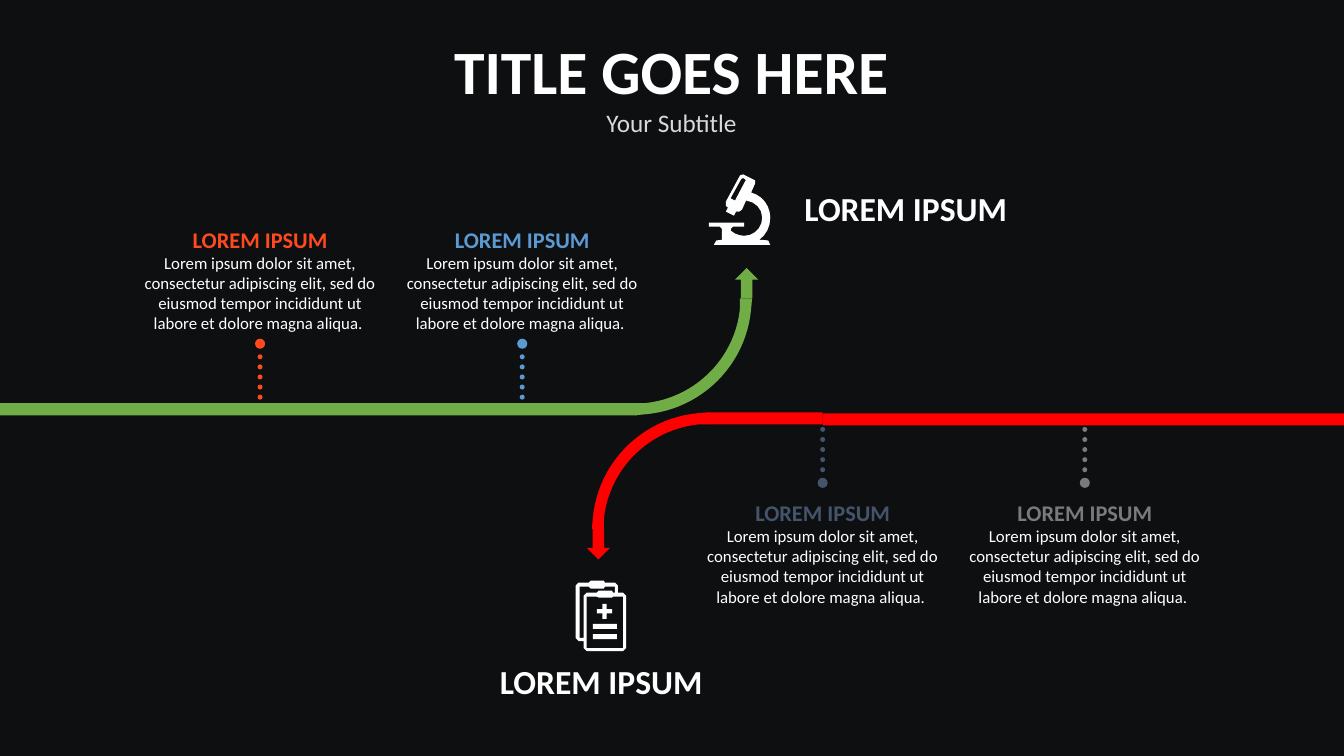
from math import ceil, cos, dist, pi, sin

from pptx import Presentation
from pptx.dml.color import RGBColor
from pptx.enum.shapes import MSO_SHAPE as Preset
from pptx.enum.text import MSO_AUTO_SIZE as AutoSize, PP_ALIGN as Align
from pptx.util import Inches, Pt

BACKGROUND = RGBColor(0x0E, 0x0F, 0x11)
WHITE = RGBColor(0xFF, 0xFF, 0xFF)
LIGHT_GRAY = RGBColor(0xD9, 0xD9, 0xD9)
GREEN = RGBColor(0x70, 0xAD, 0x47)
RED = RGBColor(0xFF, 0x00, 0x00)
ORANGE = RGBColor(0xFE, 0x4A, 0x1E)
BLUE = RGBColor(0x5C, 0x9A, 0xD3)
SLATE = RGBColor(0x44, 0x54, 0x6B)
GRAY = RGBColor(0x7A, 0x7A, 0x7A)

WIDTH, HEIGHT = 13.33, 7.5
BAND = 0.12
HEADING = "LOREM IPSUM"
BODY = ("Lorem ipsum dolor sit amet, consectetur adipiscing elit, sed do "
        "eiusmod tempor incididunt ut labore et dolore magna aliqua. ")

# In outlines, a pair is a corner and six numbers are a Bézier curve.
UP_BEND = [
    (7.46, 2.96), (7.45, 3.07), (7.4, 3.62, 6.96, 4.06, 6.41, 4.11),
    (6.3, 4.12), (6.3, 4), (6.4, 4), (6.89, 3.95, 7.29, 3.56, 7.34, 3.06),
    (7.34, 2.96),
]
MICROSCOPE = [
    [(7.56, 2.38), (7.53, 2.38), (7.6, 2.33, 7.64, 2.25, 7.64, 2.16),
     (7.64, 2.04, 7.56, 1.94, 7.45, 1.91), (7.49, 1.82), (7.49, 1.79),
     (7.37, 1.73), (7.34, 1.74), (7.2, 2),
     (7.19, 2.03, 7.2, 2.06, 7.22, 2.06), (7.2, 2.1), (7.28, 2.14),
     (7.3, 2.1), (7.32, 2.11, 7.34, 2.1, 7.36, 2.08), (7.4, 1.99),
     (7.49, 2, 7.56, 2.07, 7.56, 2.16), (7.56, 2.26, 7.48, 2.34, 7.38, 2.34),
     (7.34, 2.34, 7.28, 2.32, 7.25, 2.29), (7.25, 2.27), (7.27, 2.25),
     (7.38, 2.25), (7.38, 2.21), (7.03, 2.21), (7.03, 2.25), (7.14, 2.25),
     (7.16, 2.27), (7.16, 2.38), (7.12, 2.38, 7.08, 2.38, 7.08, 2.43),
     (7.64, 2.43), (7.64, 2.38, 7.61, 2.38, 7.56, 2.38)],
    [(7.4, 1.79), (7.39, 1.8), (7.29, 1.99), (7.25, 1.97), (7.25, 1.96),
     (7.35, 1.78), (7.36, 1.77), (7.38, 1.77)],
]
CLIPBOARDS = [
    [(6.18, 5.88), (6.13, 5.88), (6.13, 5.81), (6.1, 5.78), (6, 5.78),
     (5.99, 5.76), (5.86, 5.76), (5.84, 5.78), (5.74, 5.78), (5.71, 5.81),
     (5.71, 6.33), (5.74, 6.36), (5.79, 6.36), (5.79, 6.43), (5.82, 6.46),
     (6.18, 6.46), (6.21, 6.43), (6.21, 5.91)],
    [(5.79, 5.91), (5.79, 6.33), (5.75, 6.33), (5.75, 5.82), (5.84, 5.82),
     (5.86, 5.84), (5.99, 5.84), (6, 5.82), (6.1, 5.82), (6.1, 5.88),
     (6.08, 5.88), (6.07, 5.86), (5.94, 5.86), (5.92, 5.88), (5.82, 5.88)],
    [(6.18, 6.43), (5.82, 6.43), (5.82, 5.92), (5.92, 5.92), (5.94, 5.93),
     (6.07, 5.93), (6.08, 5.92), (6.18, 5.92)],
]


def flatten(outline):
    """Turn corners and curves into points, with more on longer curves."""
    points = []
    for part in outline:
        if len(part) == 2:
            points.append(part)
            continue
        x0, y0 = points[-1]
        x1, y1, x2, y2, x3, y3 = part
        steps = max(2, ceil(16 * dist((x0, y0), (x3, y3))))
        for step in range(1, steps + 1):
            t = step / steps
            a, b, c, d = (1 - t)**3, 3 * t * (1 - t)**2, 3 * t**2 * (1 - t), t**3
            points.append((a * x0 + b * x1 + c * x2 + d * x3,
                           a * y0 + b * y1 + c * y2 + d * y3))
    return points


def circle(x, y, radius, sides):
    angles = [2 * pi * side / sides for side in range(sides)]
    return [(x + radius * cos(a), y + radius * sin(a)) for a in angles]


def half_turn(outline):
    """Turn an outline about the point midway between the two bends."""
    turned_x, turned_y = WIDTH, 8.21
    return [tuple((turned_y if i % 2 else turned_x) - value
                  for i, value in enumerate(part)) for part in outline]


class Timeline:
    font = "Calibri"

    def __init__(self, slide):
        self.slide = slide
        slide.background.fill.solid()
        slide.background.fill.fore_color.rgb = BACKGROUND

    def paint(self, shape, color):
        shape.shadow.inherit = False
        shape.fill.solid()
        shape.fill.fore_color.rgb = color
        shape.line.fill.background()

    def preset(self, kind, x, y, width, height, color, rotation=0):
        shape = self.slide.shapes.add_shape(
            kind, Inches(x), Inches(y), Inches(width), Inches(height))
        shape.rotation = rotation
        self.paint(shape, color)
        return shape

    def outline(self, contours, color):
        builder = None
        for contour in contours:
            start, *rest = [(Inches(x), Inches(y)) for x, y in flatten(contour)]
            if builder is None:
                builder = self.slide.shapes.build_freeform(*start)
            else:
                builder.move_to(*start)
            builder.add_line_segments(rest, close=True)
        self.paint(builder.convert_to_shape(), color)

    def text(self, x, y, width, height, *lines, align=Align.CENTER,
             inset=(0.1, 0.05)):
        """Each line is its wording, size, colour and boldness."""
        box = self.slide.shapes.add_textbox(
            Inches(x), Inches(y), Inches(width), Inches(height))
        frame = box.text_frame
        frame.word_wrap = True
        frame.auto_size = AutoSize.SHAPE_TO_FIT_TEXT
        frame.margin_left = frame.margin_right = Inches(inset[0])
        frame.margin_top = frame.margin_bottom = Inches(inset[1])
        for index, (words, size, color, bold) in enumerate(lines):
            paragraph = frame.add_paragraph() if index else frame.paragraphs[0]
            paragraph.alignment = align
            run = paragraph.add_run()
            run.text = words
            run.font.name = self.font
            run.font.size = Pt(size)
            run.font.bold = bold
            run.font.color.rgb = color

    def milestone(self, x, head_y, toward_band, text_y, color):
        """Draw a dotted pin, its head away from the band, and its text."""
        dots = [circle(x, head_y + toward_band * (0.13 + 0.1 * step), 0.025, 8)
                for step in range(5)]
        self.outline([circle(x, head_y, 0.05, 12), *dots], color)
        self.text(x - 1.25, text_y, 2.5, 1.14, (HEADING, 16, color, True),
                  (BODY, 12, WHITE, False), inset=(0.07, 0.03))

    def branch_label(self, x, y):
        self.text(x, y, 2.54, 0.5, (HEADING, 24, WHITE, True), align=Align.LEFT)


def main():
    deck = Presentation()
    deck.slide_width, deck.slide_height = Inches(WIDTH), Inches(HEIGHT)
    timeline = Timeline(deck.slides.add_slide(deck.slide_layouts[6]))

    timeline.text(3.65, 0.28, 6.02, 1.14, ("TITLE GOES HERE", 44, WHITE, True),
                  ("Your Subtitle", 18, LIGHT_GRAY, False))

    timeline.preset(Preset.DOWN_ARROW, 7.29, 2.66, 0.23, 0.3, GREEN, rotation=180)
    timeline.outline([UP_BEND], GREEN)
    timeline.preset(Preset.DOWN_ARROW, 5.82, 5.25, 0.23, 0.3, RED)
    timeline.outline([half_turn(UP_BEND)], RED)
    for x, y, width, color in [
        (5.18, 4, 1.14, GREEN), (2.58, 4, 2.6, GREEN), (0, 4, 2.58, GREEN),
        (7.02, 4.09, 1.14, RED), (8.16, 4.1, 2.6, RED), (10.76, 4.1, 2.57, RED),
    ]:
        timeline.preset(Preset.RECTANGLE, x, y, width, BAND, color)

    for x, color in [(2.58, ORANGE), (5.18, BLUE)]:
        timeline.milestone(x, 3.41, 1, 2.21, color)
    for x, color in [(8.16, SLATE), (10.76, GRAY)]:
        timeline.milestone(x, 4.79, -1, 4.92, color)

    timeline.outline(MICROSCOPE, WHITE)
    timeline.branch_label(7.88, 1.82)

    timeline.outline(CLIPBOARDS, WHITE)
    for y in (6.19, 6.29):
        timeline.preset(Preset.RECTANGLE, 5.88, y, 0.24, 0.05, WHITE)
    plus = timeline.preset(Preset.CROSS, 5.92, 5.99, 0.15, 0.15, WHITE)
    plus.adjustments[0] = 0.36
    timeline.branch_label(4.86, 6.51)

    deck.save("out.pptx")


if __name__ == "__main__":
    main()
